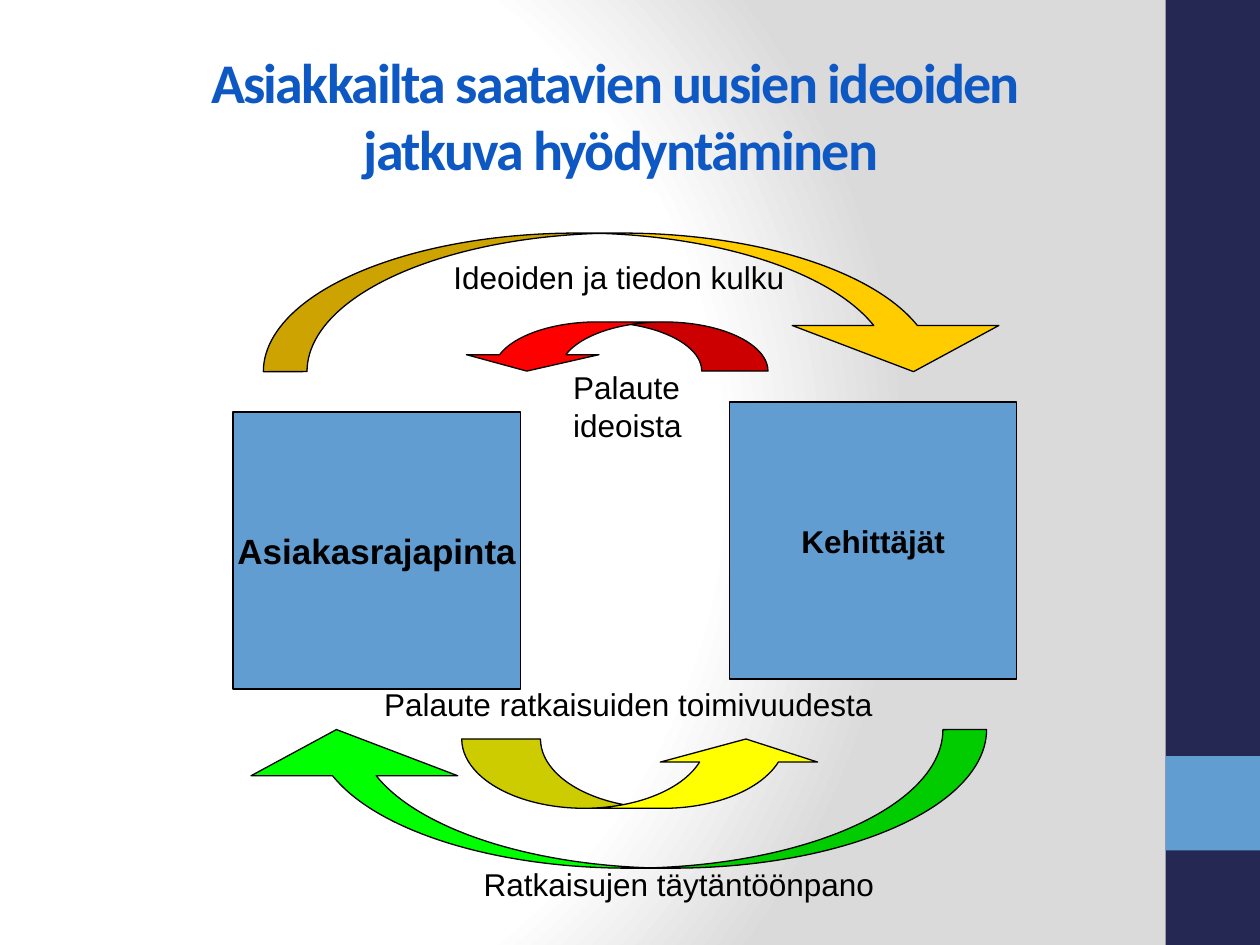
from lxml.etree import SubElement
from pptx import Presentation
from pptx.dml.color import RGBColor
from pptx.enum.shapes import MSO_SHAPE
from pptx.enum.text import MSO_ANCHOR, MSO_AUTO_SIZE, PP_ALIGN
from pptx.oxml import parse_xml
from pptx.oxml.ns import nsdecls, qn
from pptx.util import Inches, Pt

NAVY = RGBColor(0x24, 0x28, 0x52)
SKY = RGBColor(0x62, 0x9D, 0xD1)
TITLE_BLUE = RGBColor(0x0E, 0x58, 0xC4)
BLACK = RGBColor(0, 0, 0)
RED = RGBColor(0xFF, 0, 0)
GOLD = RGBColor(0xFF, 0xCC, 0)
GREEN = RGBColor(0, 0xFF, 0)
YELLOW = RGBColor(0xFF, 0xFF, 0)

BACKDROP_STOPS = [(0, "FFFFFF"), (75, "FFFFFF"), (100, "DADADA")]
OUTER_BEND = (0.315, 1.491, 0.333)


def inches(box):
    return [Inches(value) for value in box]


def format_text(frame, align=PP_ALIGN.LEFT, **font_values):
    values = {"name": "Arial", "size": Pt(18), "bold": False, **font_values}
    for para in frame.paragraphs:
        para.alignment = align
        for span in para.runs:
            span.font.color.rgb = values.get("color", BLACK)
            for name in ("name", "size", "bold"):
                setattr(span.font, name, values[name])


def add_filled(page, preset, box, color, outlined=True):
    shape = page.shapes.add_shape(preset, *inches(box))
    shape.shadow.inherit = False
    shape.fill.solid()
    shape.fill.fore_color.rgb = color
    if outlined:
        shape.line.color.rgb = BLACK
        shape.line.width = Pt(0.75)
    else:
        shape.line.fill.background()
    return shape


def paint_backdrop(page):
    """Radial gradient from white to grey, which python-pptx cannot set."""
    page.background.fill.solid()
    properties = page.element.find(".//" + qn("p:bgPr"))
    gradient = parse_xml(f'<a:gradFill {nsdecls("a")} rotWithShape="1"/>')
    stops = SubElement(gradient, qn("a:gsLst"))
    for percent, color in BACKDROP_STOPS:
        stop = SubElement(stops, qn("a:gs"), pos=str(percent * 1000))
        SubElement(stop, qn("a:srgbClr"), val=color)
    circle = SubElement(gradient, qn("a:path"), path="circle")
    SubElement(circle, qn("a:fillToRect"), l="20000", t="50000", r="100000", b="50000")
    properties.replace(properties.find(qn("a:solidFill")), gradient)


def add_side_band(page, box):
    left, top, width, height = box
    add_filled(page, MSO_SHAPE.RECTANGLE, box, NAVY, outlined=False)
    accent = (left, top + 0.8 * height, width, width)
    add_filled(page, MSO_SHAPE.RECTANGLE, accent, SKY, outlined=False)


def place_title(page, box, text):
    title = page.shapes.title
    title.left, title.top, title.width, title.height = inches(box)
    frame = title.text_frame
    frame.text = text
    frame.auto_size = MSO_AUTO_SIZE.NONE
    frame.vertical_anchor = MSO_ANCHOR.MIDDLE
    format_text(frame, PP_ALIGN.CENTER, name="Calibri", size=Pt(32), bold=True, color=TITLE_BLUE)
    for span in frame.paragraphs[0].runs:
        span.font._element.set("spc", "-100")


def add_party(page, box, text, size):
    frame = add_filled(page, MSO_SHAPE.RECTANGLE, box, SKY).text_frame
    frame.text = text
    frame.word_wrap = False
    frame.vertical_anchor = MSO_ANCHOR.MIDDLE
    format_text(frame, PP_ALIGN.CENTER, size=Pt(size), bold=True)


def add_arrow(page, preset, box, color, rotation, bend):
    arrow = add_filled(page, preset, box, color)
    arrow.rotation = rotation
    for index, value in enumerate(bend):
        arrow.adjustments[index] = value


def add_label(page, box, text):
    frame = page.shapes.add_textbox(*inches(box)).text_frame
    frame.text = text
    frame.word_wrap = False
    frame.auto_size = MSO_AUTO_SIZE.SHAPE_TO_FIT_TEXT
    format_text(frame)


def add_cycle(page, box):
    """Two parties joined by arrows; parts are placed from the box corner."""
    left, top = box[:2]

    def inside(x, y, width, height):
        return left + x, top + y, width, height

    parties = [
        ((0, 1.74, 2.28, 2.2), "Asiakasrajapinta", 20),
        ((3.94, 1.66, 2.28, 2.2), "Kehittäjät", 18),
    ]
    down, right = MSO_SHAPE.CURVED_DOWN_ARROW, MSO_SHAPE.CURVED_RIGHT_ARROW
    arrows = [
        (right, (2.83, 0, 0.39, 2.44), RED, 90, (1.348, 2.696, 0.333)),
        (down, (0.24, 0.32, 5.98, 1.1), GOLD, 0, OUTER_BEND),
        (down, (0, 4.26, 5.98, 1.1), GREEN, 180, OUTER_BEND),
        (right, (2.98, 3.17, 0.55, 2.88), YELLOW, 270, (1.136, 2.271, 0.333)),
    ]
    labels = [
        ((1.65, 0.47, 2.83, 0.4), "Ideoiden ja tiedon kulku"),
        ((2.6, 1.34, 1.13, 0.7), "Palaute\nideoista"),
        ((1.89, 5.29, 3.3, 0.4), "Ratkaisujen täytäntöönpano"),
        ((1.1, 3.86, 4.08, 0.4), "Palaute ratkaisuiden toimivuudesta"),
    ]
    for place, text, size in parties:
        add_party(page, inside(*place), text, size)
    for preset, place, color, rotation, bend in arrows:
        add_arrow(page, preset, inside(*place), color, rotation, bend)
    for place, text in labels:
        add_label(page, inside(*place), text)


def main():
    deck = Presentation()
    deck.slide_width, deck.slide_height = Inches(10), Inches(7.5)
    page = deck.slides.add_slide(deck.slide_layouts[5])
    paint_backdrop(page)
    add_side_band(page, (9.25, 0, 0.75, 7.5))
    place_title(page, (0.67, 0.44, 8.43, 0.94),
                "Asiakkailta saatavien uusien ideoiden\v jatkuva hyödyntäminen")
    add_cycle(page, (1.85, 1.53, 6.22, 5.69))
    deck.save("out.pptx")


if __name__ == "__main__":
    main()
